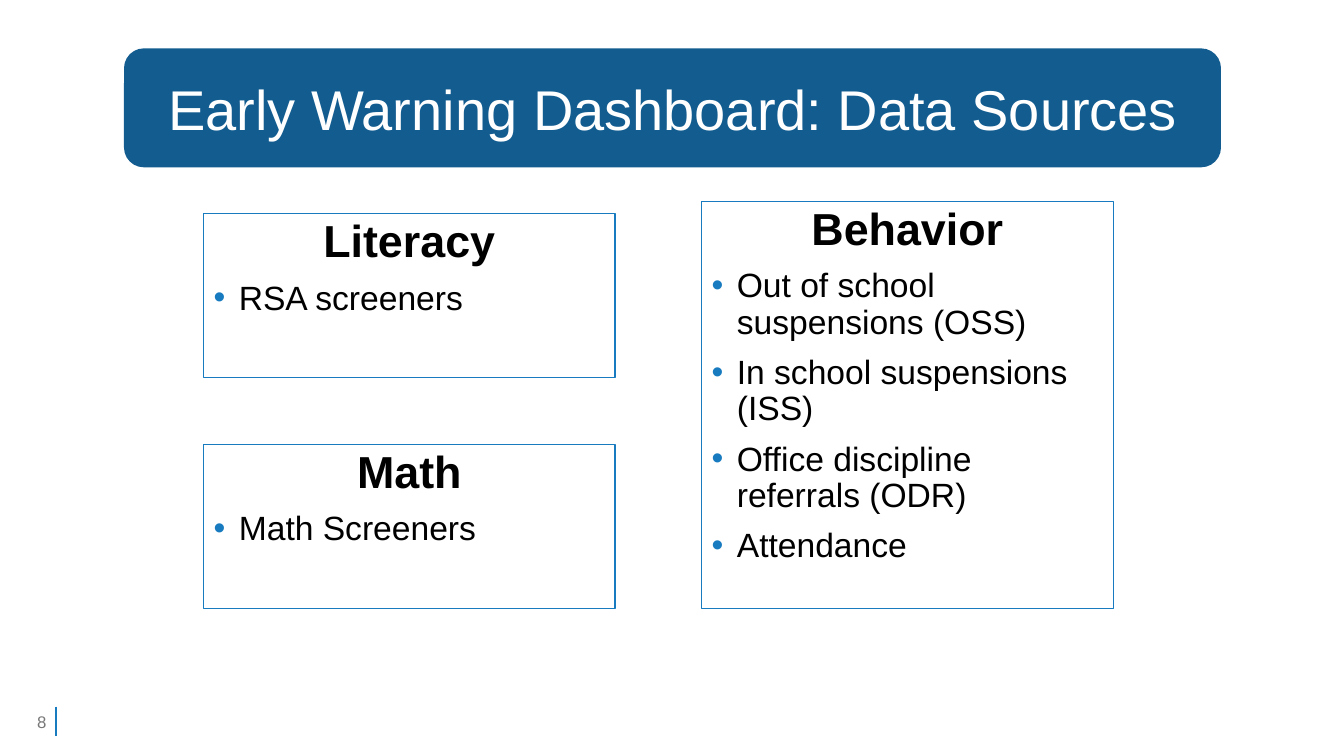
from typing import NamedTuple

from lxml import etree
from pptx import Presentation
from pptx.dml.color import RGBColor
from pptx.enum.shapes import MSO_CONNECTOR, MSO_SHAPE
from pptx.enum.text import MSO_ANCHOR, PP_ALIGN
from pptx.oxml.ns import qn
from pptx.util import Emu, Pt

RECT, ROUNDED = MSO_SHAPE.RECTANGLE, MSO_SHAPE.ROUNDED_RECTANGLE
STRAIGHT = MSO_CONNECTOR.STRAIGHT
TOP, MIDDLE = MSO_ANCHOR.TOP, MSO_ANCHOR.MIDDLE
LEFT, CENTER, RIGHT = PP_ALIGN.LEFT, PP_ALIGN.CENTER, PP_ALIGN.RIGHT

EMU_PER_PX = 9144
FONT = "Arial"
BLUE, NAVY, GRAY, BLACK, WHITE = "187BC0", "125C90", "787878", "000000", "FFFFFF"
CARD_W = 408
INDENT = 25


class Card(NamedTuple):
    """A bordered box listing the data sources of one area."""
    left: int
    top: int
    height: int
    heading: str
    sources: tuple[str, ...]


CARDS = (
    Card(202, 212, 163, "Literacy", ("RSA screeners",)),
    Card(202, 441, 163, "Math", ("Math Screeners",)),
    Card(696, 200, 404, "Behavior", (
        "Out of school suspensions (OSS)",
        "In school suspensions (ISS)",
        "Office discipline referrals (ODR)",
        "Attendance",
    )),
)


def px(n: int) -> Emu:
    """Turn px into EMU."""
    return Emu(n * EMU_PER_PX)


def color(value: str) -> RGBColor:
    """Turn a hex string into a colour."""
    return RGBColor.from_string(value)


def add_run(p, text: str, size: int, ink: str, bold: bool = False) -> None:
    """Add one formatted run to a paragraph."""
    r = p.add_run()
    r.text = text
    r.font.name = FONT
    r.font.size = Pt(size)
    r.font.bold = bold
    r.font.color.rgb = color(ink)


def add_box(slide, kind, left: int, top: int, width: int, height: int,
            fill: str | None = None, line: str | None = None, anchor=TOP):
    """Draw a preset shape and return its text frame."""
    sp = slide.shapes.add_shape(kind, px(left), px(top), px(width), px(height))
    sp.shadow.inherit = False
    if fill:
        sp.fill.solid()
        sp.fill.fore_color.rgb = color(fill)
    else:
        sp.fill.background()
    if line:
        sp.line.color.rgb = color(line)
        sp.line.width = Pt(0.75)
    else:
        sp.line.fill.background()
    tf = sp.text_frame
    tf.word_wrap = True
    tf.vertical_anchor = anchor
    return tf


def add_bullet(p) -> None:
    """Give a paragraph a hanging blue bullet."""
    pPr = p._p.get_or_add_pPr()
    pPr.set("marL", str(px(INDENT)))
    pPr.set("indent", str(px(-INDENT)))
    clr = etree.SubElement(pPr, qn("a:buClr"))
    etree.SubElement(clr, qn("a:srgbClr"), val=BLUE)
    etree.SubElement(pPr, qn("a:buFont"), typeface=FONT)
    etree.SubElement(pPr, qn("a:buChar"), char="•")


def add_card(slide, card: Card) -> None:
    """Draw a card with its heading and bulleted sources."""
    tf = add_box(slide, RECT, card.left, card.top, CARD_W, card.height, line=BLUE)
    p = tf.paragraphs[0]
    p.alignment = CENTER
    p.line_spacing = 0.9
    add_run(p, card.heading, 32, BLACK, bold=True)
    for source in card.sources:
        p = tf.add_paragraph()
        p.alignment = LEFT
        p.line_spacing = 0.9
        p.space_before = Pt(10)
        add_bullet(p)
        add_run(p, source, 24, BLACK)


def add_title(slide, text: str) -> None:
    """Draw the title banner."""
    tf = add_box(slide, ROUNDED, 123, 48, 1088, 118, fill=NAVY, anchor=MIDDLE)
    p = tf.paragraphs[0]
    p.alignment = CENTER
    add_run(p, text, 40, WHITE)


def add_page_mark(slide, number: str) -> None:
    """Draw the page number and the rule beside it."""
    rule = slide.shapes.add_connector(STRAIGHT, px(56), px(701), px(56), px(730))
    rule.line.color.rgb = color(BLUE)
    rule.line.width = Pt(1.5)
    etree.SubElement(rule._element.spPr, qn("a:effectLst"))
    tf = slide.shapes.add_textbox(px(0), px(696), px(56), px(40)).text_frame
    tf.word_wrap = True
    tf.vertical_anchor = MIDDLE
    p = tf.paragraphs[0]
    p.alignment = RIGHT
    add_run(p, number, 12, GRAY)


def main() -> None:
    """Build and save the slide."""
    prs = Presentation()
    prs.slide_width, prs.slide_height = px(1333), px(750)
    s = prs.slides.add_slide(prs.slide_layouts[6])
    add_page_mark(s, "8")
    add_title(s, "Early Warning Dashboard: Data Sources")
    for card in CARDS:
        add_card(s, card)
    prs.save("out.pptx")


if __name__ == "__main__":
    main()
